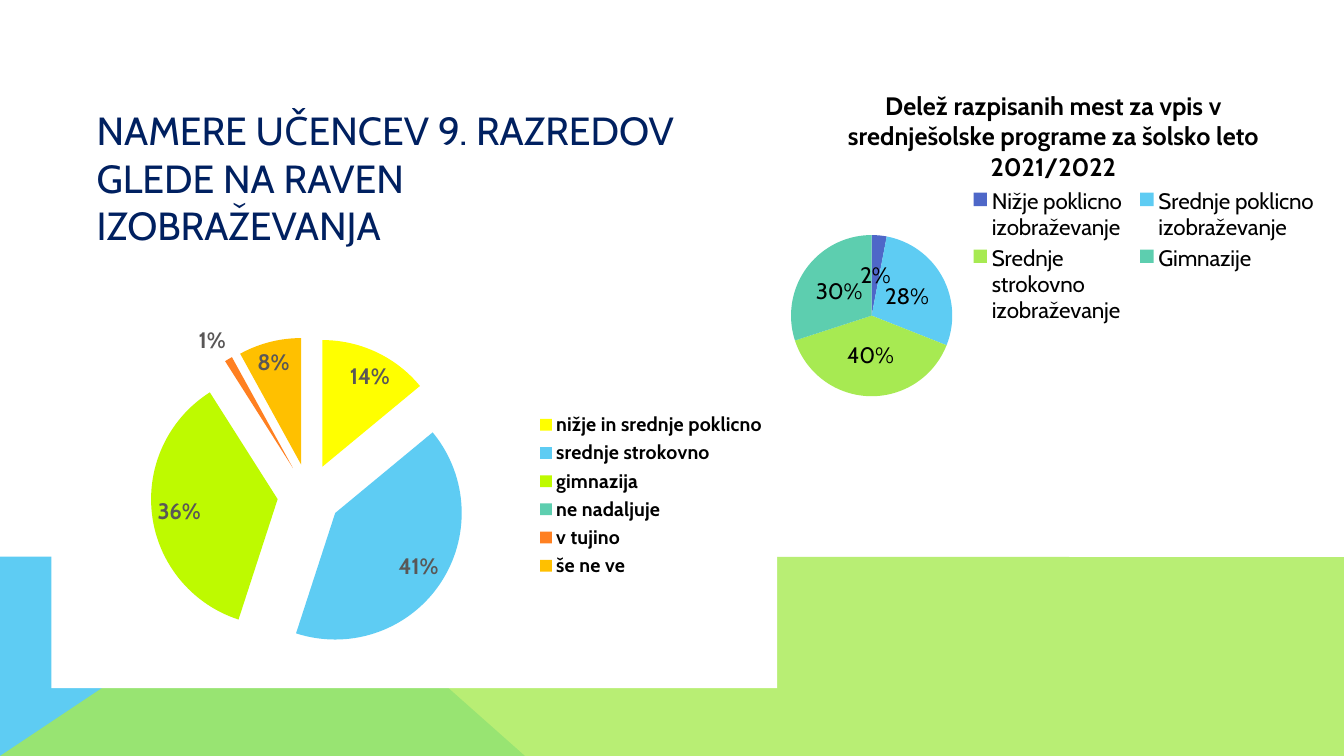
"""Build a slide comparing pupils' intentions with the places offered in secondary schools."""
from lxml.etree import SubElement
from pptx import Presentation
from pptx.chart.data import CategoryChartData
from pptx.dml.color import RGBColor
from pptx.enum.chart import XL_CHART_TYPE, XL_LABEL_POSITION, XL_LEGEND_POSITION
from pptx.enum.text import MSO_ANCHOR
from pptx.oxml import parse_xml
from pptx.oxml.ns import nsdecls, qn
from pptx.util import Pt

THEME = {
    "font": "Cabin", "navy": "002060", "black": "000000", "grey": "595757", "white": "FFFFFF",
    "sky": "5ECCF3", "green": "A7EA52", "yellow": "FFFF00", "lime": "BEFA00", "teal": "5DCEAF",
    "orange": "FF8021", "amber": "FFC000", "indigo": "4E67C8",
    "heading": 28, "chart_title": 18, "label": 16, "legend": 14, "base": 10,
}
PAGE_SIZE = (960, 540)
HEADING = "NAMERE UČENCEV 9. RAZREDOV\vGLEDE NA RAVEN IZOBRAŽEVANJA"
HEADING_BOX = (61.9, 105.1, 434.9, 43.2)
BANDS = [
    {"points": [(0, 540), (0, 397.5), (214.5, 397.5), (375, 540)], "color": "sky", "opacity": 100},
    {"points": [(0, 540), (214, 397.5), (960, 398), (960, 540)], "color": "green", "opacity": 80},
]
INTENTIONS = {
    "box": (36.7, 216, 518.4, 275.6),
    "slices": [
        ("nižje in srednje poklicno", 14, "yellow"), ("srednje strokovno", 41, "sky"),
        ("gimnazija", 36, "lime"), ("ne nadaljuje", 0, "teal"),
        ("v tujino ", 1, "orange"), ("še ne ve", 8, "amber"),
    ],
    "legend": {"size": "legend", "bold": True},
    "labels": {"size": "label", "bold": True, "color": "grey"},
    "position": XL_LABEL_POSITION.BEST_FIT,
    "explosion": 25,
    "layout": {"x": 0.07, "y": 0.09, "w": 0.57, "h": 0.82},
}
PLACES = {
    "box": (555.1, 50.4, 394.6, 265),
    "title": "Delež razpisanih mest za vpis v srednješolske programe za šolsko leto 2021/2022",
    "slices": [
        ("Nižje poklicno izobraževanje", 3, "indigo"), ("Srednje poklicno izobraževanje", 28, "sky"),
        ("Srednje strokovno izobraževanje ", 39, "green"), ("Gimnazije", 30, "teal"),
    ],
    "legend": {"size": "label"},
    "labels": {"size": "label"},
    "position": XL_LABEL_POSITION.CENTER,
    "own_labels": {0: "2%", 2: "40%"},
}


def color_of(name):
    return RGBColor.from_string(THEME[name])


def set_font(font, size="base", bold=False, color="black"):
    font.name, font.size, font.bold = THEME["font"], Pt(THEME[size]), bold
    font.color.rgb = color_of(color)


def write_text(frame, text, **style):
    para = frame.paragraphs[0]
    para.text = text
    for span in para.runs:
        set_font(span.font, **style)


def add_band(page, points, color, opacity):
    builder = page.shapes.build_freeform(Pt(points[0][0]), Pt(points[0][1]))
    builder.add_line_segments([(Pt(x), Pt(y)) for x, y in points[1:]], close=True)
    band = builder.convert_to_shape()
    band.shadow.inherit = False
    band.fill.solid()
    band.fill.fore_color.rgb = color_of(color)
    band.line.fill.background()
    if opacity < 100:
        tint = band.fill._xPr.find(".//" + qn("a:srgbClr"))
        SubElement(tint, qn("a:alpha"), val=str(opacity * 1000))


def paint_background(chart):
    chart._chartSpace.chart.addnext(parse_xml(
        f'<c:spPr {nsdecls("c", "a")}><a:solidFill><a:srgbClr val="{THEME["white"]}"/>'
        "</a:solidFill><a:ln><a:noFill/></a:ln></c:spPr>"))


def place_plot(chart, layout):
    area = chart._chartSpace.chart.plotArea
    for old in area.findall(qn("c:layout")):
        area.remove(old)
    modes = '<c:layoutTarget val="inner"/><c:xMode val="edge"/><c:yMode val="edge"/>'
    sizes = "".join(f'<c:{key} val="{value}"/>' for key, value in layout.items())
    area.insert(0, parse_xml(
        f'<c:layout {nsdecls("c")}><c:manualLayout>{modes}{sizes}</c:manualLayout></c:layout>'))


def add_pie(page, box, slices, legend, labels, position,
            title=None, explosion=0, layout=None, own_labels=None):
    data = CategoryChartData()
    data.categories = [name for name, _, _ in slices]
    data.add_series("Series 1", [value for _, value, _ in slices])
    chart = page.shapes.add_chart(XL_CHART_TYPE.PIE, *map(Pt, box), data).chart
    set_font(chart.font)
    paint_background(chart)
    chart.has_title = title is not None
    if title:
        write_text(chart.chart_title.text_frame, title, size="chart_title", bold=True)
    chart.has_legend = True
    chart.legend.position = XL_LEGEND_POSITION.RIGHT
    chart.legend.include_in_layout = False
    set_font(chart.legend.font, **legend)
    if layout:
        place_plot(chart, layout)

    chart.plots[0].vary_by_categories = True
    series = chart.plots[0].series[0]
    if explosion:
        series._element.find(qn("c:tx")).addnext(
            parse_xml(f'<c:explosion {nsdecls("c")} val="{explosion}"/>'))
    for index, (_, _, color) in enumerate(slices):
        fill = series.points[index].format.fill
        fill.solid()
        fill.fore_color.rgb = color_of(color)
    percents = series.data_labels
    percents.show_percentage, percents.show_value = True, False
    percents.position = position
    set_font(percents.font, **labels)
    for index, text in (own_labels or {}).items():
        label = series.points[index].data_label
        write_text(label.text_frame, text, **labels)
        label.position = position


def main():
    deck = Presentation()
    deck.slide_width, deck.slide_height = map(Pt, PAGE_SIZE)
    page = deck.slides.add_slide(deck.slide_layouts[6])
    for band in BANDS:
        add_band(page, **band)
    heading = page.shapes.add_textbox(*map(Pt, HEADING_BOX)).text_frame
    heading.word_wrap = True
    heading.vertical_anchor = MSO_ANCHOR.MIDDLE
    write_text(heading, HEADING, size="heading", color="navy")
    for pie in (INTENTIONS, PLACES):
        add_pie(page, **pie)
    deck.save("out.pptx")


if __name__ == "__main__":
    main()
